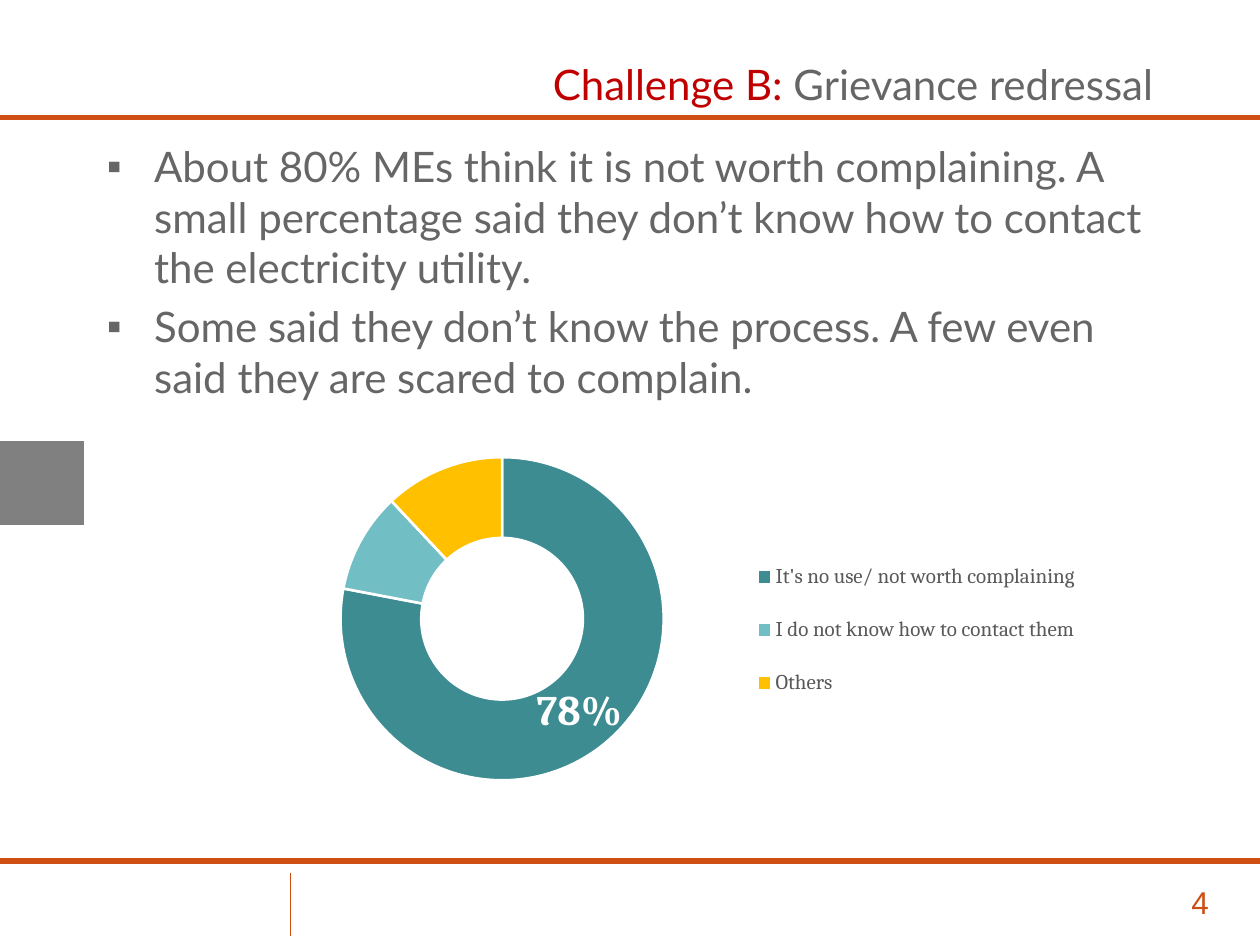
from lxml import etree
from pptx import Presentation
from pptx import util as u
from pptx.chart import data as cd
from pptx.dml.color import RGBColor
from pptx.enum import chart as ch, shapes, text
from pptx.oxml import ns

Pt = u.Pt
WHITE = RGBColor(0xFF, 0xFF, 0xFF)
RUST = RGBColor(0xCE, 0x4E, 0x14)
RED = RGBColor(0xC0, 0x00, 0x00)
GREY = RGBColor(0x66, 0x66, 0x66)
BLOCK = RGBColor(0x80, 0x80, 0x80)
LABEL = RGBColor(0x40, 0x40, 0x40)
KEY = RGBColor(0x59, 0x59, 0x59)
TEAL = RGBColor(0x3C, 0x8C, 0x92)
AQUA = RGBColor(0x71, 0xBE, 0xC4)
GOLD = RGBColor(0xFF, 0xC0, 0x00)

BULLETS = [
    "About 80% MEs think it is not worth complaining. A small percentage "
    "said they don’t know how to contact the electricity utility.",
    "Some said they don’t know the process. A few even said they are "
    "scared to complain.",
]
SHARES = [
    ("It's no use/ not worth complaining ", 0.78, TEAL),
    ("I do not know how to contact them", 0.10, AQUA),
    ("Others", 0.12, GOLD),
]


def place(item, left, top, width, height):
    item.left, item.top = Pt(left), Pt(top)
    item.width, item.height = Pt(width), Pt(height)


def style(font, name, size, color, bold=False):
    font.name = name
    font.size = Pt(size)
    font.color.rgb = color
    font.bold = bold


def add_run(para, words, name, size, color):
    run = para.add_run()
    run.text = words
    style(run.font, name, size, color)


def add_line(slide, x1, y1, x2, y2, width):
    line = slide.shapes.add_connector(
        shapes.MSO_CONNECTOR.STRAIGHT, Pt(x1), Pt(y1), Pt(x2), Pt(y2))
    line.line.color.rgb = RUST
    line.line.width = Pt(width)
    etree.SubElement(line._element.spPr, ns.qn("a:effectLst"))


def add_block(slide):
    block = slide.shapes.add_shape(
        shapes.MSO_SHAPE.RECTANGLE, Pt(0), Pt(252), Pt(48), Pt(48))
    block.shadow.inherit = False
    block.fill.solid()
    block.fill.fore_color.rgb = BLOCK
    block.line.fill.background()


def add_title(slide):
    title = slide.shapes.title
    place(title, 60, 24, 606, 48)
    title.text_frame.vertical_anchor = text.MSO_ANCHOR.MIDDLE
    para = title.text_frame.paragraphs[0]
    para.alignment = text.PP_ALIGN.RIGHT
    add_run(para, "Challenge B:", "Lato", 24, RED)
    add_run(para, " Grievance redressal", "Lato", 24, GREY)


def add_box(slide, left, top, width, height):
    box = slide.shapes.add_textbox(Pt(left), Pt(top), Pt(width), Pt(height))
    box.text_frame.word_wrap = True
    return box.text_frame


def add_bullet(para):
    props = para._p.get_or_add_pPr()
    props.set("marL", str(Pt(27)))
    props.set("indent", str(-Pt(27)))
    etree.SubElement(props, ns.qn("a:buFont")).set("typeface", "Arial")
    etree.SubElement(props, ns.qn("a:buChar")).set("char", "▪")


def add_body(slide):
    frame = add_box(slide, 54, 77, 612, 385)
    for i, words in enumerate(BULLETS):
        para = frame.add_paragraph() if i else frame.paragraphs[0]
        add_bullet(para)
        if i:
            para.space_before = Pt(5)
        add_run(para, words, "Lato", 24, GREY)


def add_number(slide):
    para = add_box(slide, 666, 501, 39.6, 29).paragraphs[0]
    para.alignment = text.PP_ALIGN.CENTER
    add_run(para, "4", "Arial", 18, RUST)


def set_layout(part, x, y, w, h, inner=False):
    for old in part.findall(ns.qn("c:layout")):
        part.remove(old)
    layout = etree.Element(ns.qn("c:layout"))
    manual = etree.SubElement(layout, ns.qn("c:manualLayout"))
    pairs = [("layoutTarget", "inner")] if inner else []
    pairs += [("xMode", "edge"), ("yMode", "edge"),
              ("x", x), ("y", y), ("w", w), ("h", h)]
    for tag, val in pairs:
        etree.SubElement(manual, ns.qn("c:" + tag)).set("val", str(val))
    pos = part.find(ns.qn("c:legendPos"))
    if pos is None:
        part.insert(0, layout)
    else:
        pos.addnext(layout)


def add_ring(slide):
    data = cd.CategoryChartData(number_format="0%")
    data.categories = [name for name, _, _ in SHARES]
    data.add_series("Series 1", [val for _, val, _ in SHARES])
    chart = slide.shapes.add_chart(
        ch.XL_CHART_TYPE.DOUGHNUT, Pt(180), Pt(222), Pt(486), Pt(255.6),
        data).chart
    chart.has_title = False
    chart.font.name = "Cambria"
    chart.font.size = Pt(8)

    chart.has_legend = True
    legend = chart.legend
    legend.position = ch.XL_LEGEND_POSITION.RIGHT
    legend.include_in_layout = False
    style(legend.font, "Cambria", 12, KEY)
    set_layout(legend._element, 0.5, 0.33, 0.42, 0.42)

    plot = chart.plots[0]
    plot.vary_by_categories = True
    plot._element.find(ns.qn("c:holeSize")).set("val", "44")
    set_layout(plot._element.getparent(), 0.03, 0.09, 0.38, 0.85, True)

    plot.has_data_labels = True
    labels = plot.data_labels
    labels.show_value = True
    labels.show_percentage = False
    labels.number_format = "0%"
    labels.number_format_is_linked = False
    style(labels.font, "Cambria", 12, LABEL, True)

    points = plot.series[0].points
    for i, (_, _, color) in enumerate(SHARES):
        look = points[i].format
        look.fill.solid()
        look.fill.fore_color.rgb = color
        look.line.color.rgb = WHITE
        look.line.width = Pt(1.5)
    style(points[0].data_label.font, "Cambria", 24, WHITE, True)


def main():
    deck = Presentation()
    deck.slide_width, deck.slide_height = Pt(720), Pt(540)
    slide = deck.slides.add_slide(deck.slide_layouts[5])
    add_block(slide)
    for y in (492, 67):
        add_line(slide, 0, y, 720, y, 3)
    add_number(slide)
    add_line(slide, 166, 535, 166, 499, 0.75)
    add_title(slide)
    add_body(slide)
    add_ring(slide)
    deck.save("out.pptx")


if __name__ == "__main__":
    main()
